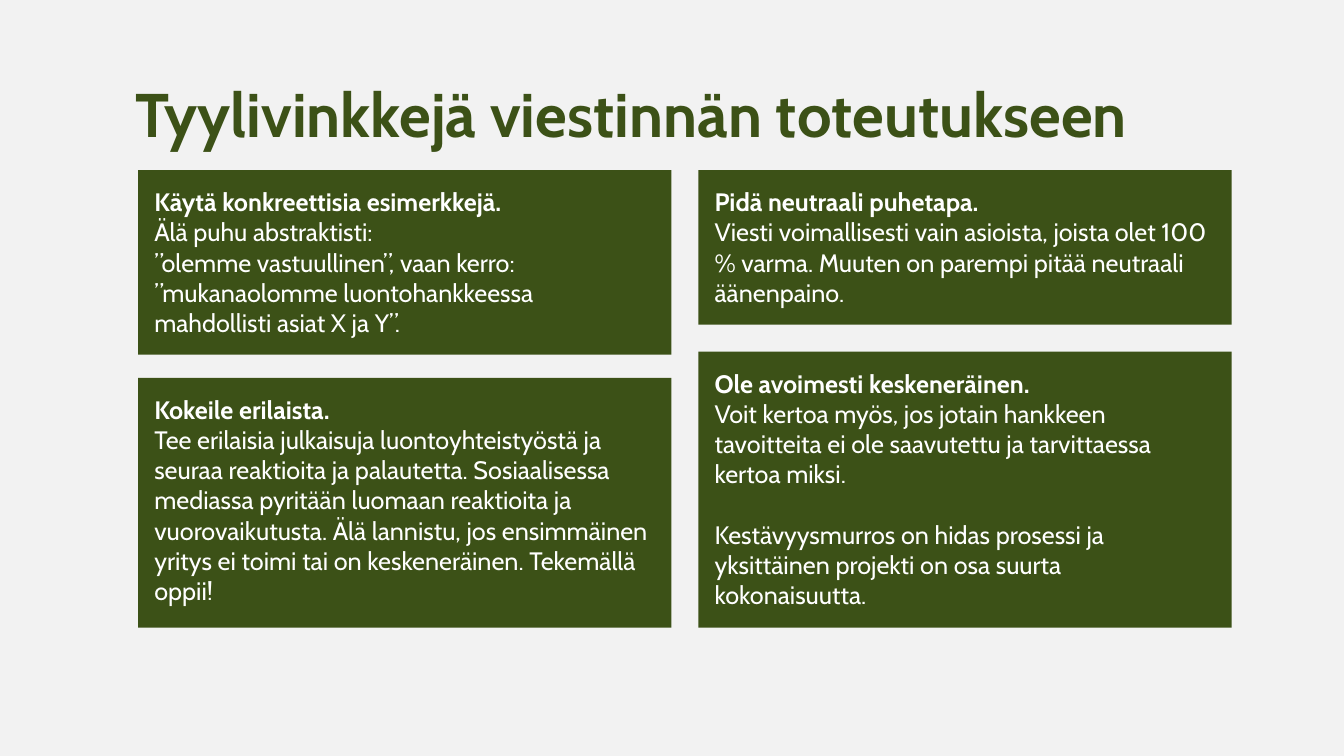
from dataclasses import dataclass

from pptx import Presentation
from pptx.dml.color import RGBColor
from pptx.enum.shapes import MSO_SHAPE
from pptx.enum.text import MSO_ANCHOR as Anchor, MSO_AUTO_SIZE as AutoSize, PP_ALIGN as Align
from pptx.util import Cm, Pt

GREEN, WHITE, PALE = "3C5117", "FFFFFF", "F2F2F2"
LEFT, RIGHT = 3.48, 17.6
TOP, BOTTOM = 4.29, 15.82
TIP_WIDTH, INSET = 13.44, 0.41
LINE_GAP = 21.6


@dataclass
class Tip:
    left: float
    top: float
    height: float
    heading: str
    body: list[str]
    gap: float = 0


TIPS = [
    Tip(LEFT, TOP, 4.65, "Käytä konkreettisia esimerkkejä.", [
        "Älä puhu abstraktisti:",
        "”olemme vastuullinen”, vaan kerro: ”mukanaolomme luontohankkeessa "
        "mahdollisti asiat X ja Y”.",
    ]),
    Tip(RIGHT, TOP, 3.89, "Pidä neutraali puhetapa.", [
        "Viesti voimallisesti vain asioista, joista olet 100 % varma. "
        "Muuten on parempi pitää neutraali äänenpaino.",
    ]),
    Tip(LEFT, BOTTOM - 6.3, 6.3, "Kokeile erilaista.", [
        "Tee erilaisia julkaisuja luontoyhteistyöstä ja seuraa reaktioita ja palautetta. "
        "Sosiaalisessa mediassa pyritään luomaan reaktioita ja vuorovaikutusta. "
        "Älä lannistu, jos ensimmäinen yritys ei toimi tai on keskeneräinen. Tekemällä oppii!",
    ]),
    Tip(RIGHT, BOTTOM - 6.96, 6.96, "Ole avoimesti keskeneräinen.", [
        "Voit kertoa myös, jos jotain hankkeen tavoitteita ei ole saavutettu "
        "ja tarvittaessa kertoa miksi.",
        "Kestävyysmurros on hidas prosessi ja yksittäinen projekti on osa suurta kokonaisuutta.",
    ], LINE_GAP),
]


def paint(target, colour: str) -> None:
    target.solid()
    target.fore_color.rgb = RGBColor.from_string(colour)


def apply(target, values: dict) -> None:
    for name, value in values.items():
        setattr(target, name, value)


def write(para, text: str, size: float, colour: str, bold: bool) -> None:
    span = para.add_run()
    span.text = text
    apply(span.font, {"name": "Cabin", "size": Pt(size), "bold": bold})
    paint(span.font.fill, colour)


def draw_title(page, text: str) -> None:
    title = page.shapes.title
    apply(title, {"left": Cm(3.15), "top": Cm(1.63), "width": Cm(27.91), "height": Cm(2.67)})
    apply(title.text_frame, {"vertical_anchor": Anchor.MIDDLE, "word_wrap": True,
                             "auto_size": AutoSize.NONE})
    para = title.text_frame.paragraphs[0]
    apply(para, {"alignment": Align.LEFT, "line_spacing": 0.9})
    write(para, text, 44, GREEN, True)


def draw_tip(page, tip: Tip) -> None:
    box = page.shapes.add_shape(MSO_SHAPE.RECTANGLE, Cm(tip.left), Cm(tip.top),
                                Cm(TIP_WIDTH), Cm(tip.height))
    box.shadow.inherit = False
    paint(box.fill, GREEN)
    box.line.fill.background()
    frame = box.text_frame
    apply(frame, {f"margin_{side}": Cm(INSET) for side in ("left", "top", "right", "bottom")})
    apply(frame, {"word_wrap": True, "vertical_anchor": Anchor.TOP,
                  "auto_size": AutoSize.SHAPE_TO_FIT_TEXT})
    for index, text in enumerate([tip.heading, *tip.body]):
        para = frame.add_paragraph() if index else frame.paragraphs[0]
        para.alignment = Align.LEFT
        if index > 1 and tip.gap:
            para.space_before = Pt(tip.gap)
        write(para, text, 18, WHITE, index == 0)


def main() -> None:
    deck = Presentation()
    apply(deck, {"slide_width": Cm(33.87), "slide_height": Cm(19.05)})
    page = deck.slides.add_slide(deck.slide_layouts[5])
    paint(page.background.fill, PALE)
    draw_title(page, "Tyylivinkkejä viestinnän toteutukseen")
    for tip in TIPS:
        draw_tip(page, tip)
    deck.save("out.pptx")


if __name__ == "__main__":
    main()
